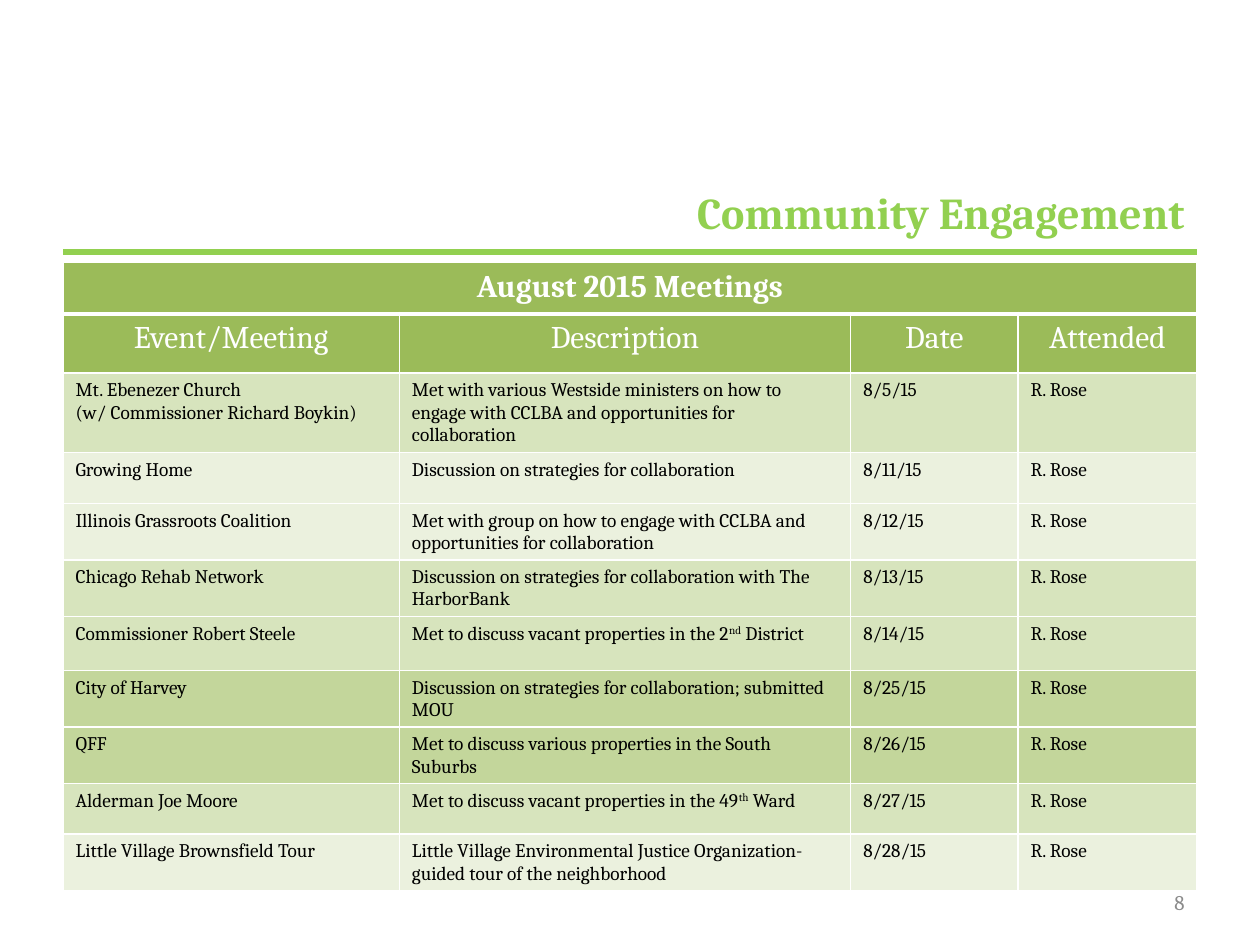
from lxml import etree
from pptx import Presentation
from pptx.dml.color import RGBColor
from pptx.enum.shapes import MSO_CONNECTOR
from pptx.enum.text import MSO_ANCHOR, PP_ALIGN
from pptx.oxml.ns import qn
from pptx.util import Cm, Pt

FONT = "Cambria"
LIME = RGBColor(0x92, 0xD0, 0x50)
OLIVE = RGBColor(0x9B, 0xBB, 0x59)
MEDIUM = RGBColor(0xC3, 0xD6, 0x9B)
LIGHT = RGBColor(0xD7, 0xE4, 0xBD)
PALE = RGBColor(0xEB, 0xF1, 0xDE)
WHITE = RGBColor(0xFF, 0xFF, 0xFF)
BLACK = RGBColor(0, 0, 0)
GRAY = RGBColor(0x8C, 0x8C, 0x8C)

LEFT, WIDTH = 1.27, 22.86
COL_WIDTHS = [6.78, 9.1, 3.37, 3.61]
HEADINGS = ["Event/Meeting", "Description", "Date", "Attended"]
HEADER_HEIGHTS = [1.04, 1.19]
CELL_BOTTOM = 0.08  # tight bottom margin keeps the table above the page number
ATTENDEE = "R. Rose"

# Row height, fill, event, description, date; ^ encloses superscripts
MEETINGS = [
    (1.19, LIGHT, "Mt. Ebenezer Church\n(w/ Commissioner Richard Boykin)",
     "Met with various Westside ministers on how to engage with CCLBA "
     "and opportunities for collaboration", "8/5/15"),
    (1.02, PALE, "Growing Home",
     "Discussion on strategies for collaboration", "8/11/15"),
    (1.02, PALE, "Illinois Grassroots Coalition",
     "Met with group on how to engage with CCLBA and opportunities for "
     "collaboration", "8/12/15"),
    (1.02, LIGHT, "Chicago Rehab Network",
     "Discussion on strategies for collaboration with The HarborBank",
     "8/13/15"),
    (1.09, LIGHT, "Commissioner Robert Steele",
     "Met to discuss vacant properties in the 2^nd^ District", "8/14/15"),
    (1.09, MEDIUM, "City of Harvey",
     "Discussion on strategies for collaboration; submitted MOU", "8/25/15"),
    (1.09, MEDIUM, "QFF",
     "Met to discuss various properties in the South Suburbs", "8/26/15"),
    (1.02, LIGHT, "Alderman Joe Moore",
     "Met to discuss vacant properties in the 49^th^ Ward", "8/27/15"),
    (1.02, PALE, "Little Village Brownsfield Tour",
     "Little Village Environmental Justice Organization-guided tour of the "
     "neighborhood", "8/28/15"),
]


def write(tf, text, size, color, align=PP_ALIGN.LEFT, bold=False):
    for i, line in enumerate(text.split("\n")):
        p = tf.add_paragraph() if i else tf.paragraphs[0]
        p.alignment = align
        p.font.name, p.font.size, p.font.bold = FONT, Pt(size), bold
        p.font.color.rgb = color
        for j, part in enumerate(line.split("^")):
            r = p.add_run()
            r.text = part
            if j % 2:
                r._r.get_or_add_rPr().set("baseline", "30000")


def add_text(s, box, text, size, color, anchor, bold=False):
    sp = s.shapes.add_textbox(*map(Cm, box))
    tf = sp.text_frame
    tf.word_wrap = True
    tf.vertical_anchor = anchor
    write(tf, text, size, color, PP_ALIGN.RIGHT, bold)
    return tf


def add_rule(s, y):
    line = s.shapes.add_connector(MSO_CONNECTOR.STRAIGHT, Cm(LEFT), Cm(y),
                                  Cm(LEFT + WIDTH), Cm(y))
    line.line.color.rgb = LIME
    line.line.width = Pt(3)
    etree.SubElement(line._element.spPr, qn("a:effectLst"))


def set_borders(cell, top=1, bottom=1):
    tcPr = cell._tc.get_or_add_tcPr()
    widths = {"lnL": 1, "lnR": 1, "lnT": top, "lnB": bottom}
    for i, (side, width) in enumerate(widths.items()):
        ln = etree.Element(qn(f"a:{side}"), w=str(Pt(width)))
        fill = etree.SubElement(ln, qn("a:solidFill"))
        etree.SubElement(fill, qn("a:srgbClr"), val=str(WHITE))
        tcPr.insert(i, ln)


def fill_cell(cell, text, fill, **style):
    cell.fill.solid()
    cell.fill.fore_color.rgb = fill
    write(cell.text_frame, text, **style)


def add_meetings(s, top):
    heights = HEADER_HEIGHTS + [m[0] for m in MEETINGS]
    table = s.shapes.add_table(len(heights), len(COL_WIDTHS), Cm(LEFT), Cm(top),
                               Cm(WIDTH), Cm(sum(heights))).table
    table.horz_banding = table.first_row = False
    for col, width in zip(table.columns, COL_WIDTHS):
        col.width = Cm(width)
    for i, (row, height) in enumerate(zip(table.rows, heights)):
        row.height = Cm(height)
        for cell in row.cells:
            cell.margin_bottom = Cm(CELL_BOTTOM)
            set_borders(cell, top=3 if i == 1 else 1, bottom=3 if i == 0 else 1)

    # Header rows
    header = dict(size=18, color=WHITE, align=PP_ALIGN.CENTER)
    table.cell(0, 0).merge(table.cell(0, len(COL_WIDTHS) - 1))
    fill_cell(table.cell(0, 0), "August 2015 Meetings", OLIVE, bold=True, **header)
    for j, heading in enumerate(HEADINGS):
        fill_cell(table.cell(1, j), heading, OLIVE, **header)

    # Meeting rows
    for i, (_, fill, *texts) in enumerate(MEETINGS, len(HEADER_HEIGHTS)):
        for j, text in enumerate(texts + [ATTENDEE]):
            fill_cell(table.cell(i, j), text, fill, size=11, color=BLACK)


def main():
    prs = Presentation()
    prs.slide_width, prs.slide_height = Cm(25.4), Cm(19.05)
    s = prs.slides.add_slide(prs.slide_layouts[6])

    # Title and rule
    add_rule(s, 5.08)
    tf = add_text(s, (LEFT, 2.54, WIDTH, 2.54), "Community Engagement", 25.2,
                  LIME, MSO_ANCHOR.BOTTOM, bold=True)
    tf.margin_bottom = Cm(0.27)

    # Meetings table
    add_meetings(s, 5.29)

    # Page number
    add_text(s, (18.2, 17.68, 5.93, 1.01), "8", 12, GRAY, MSO_ANCHOR.MIDDLE)

    prs.save("out.pptx")


if __name__ == "__main__":
    main()
